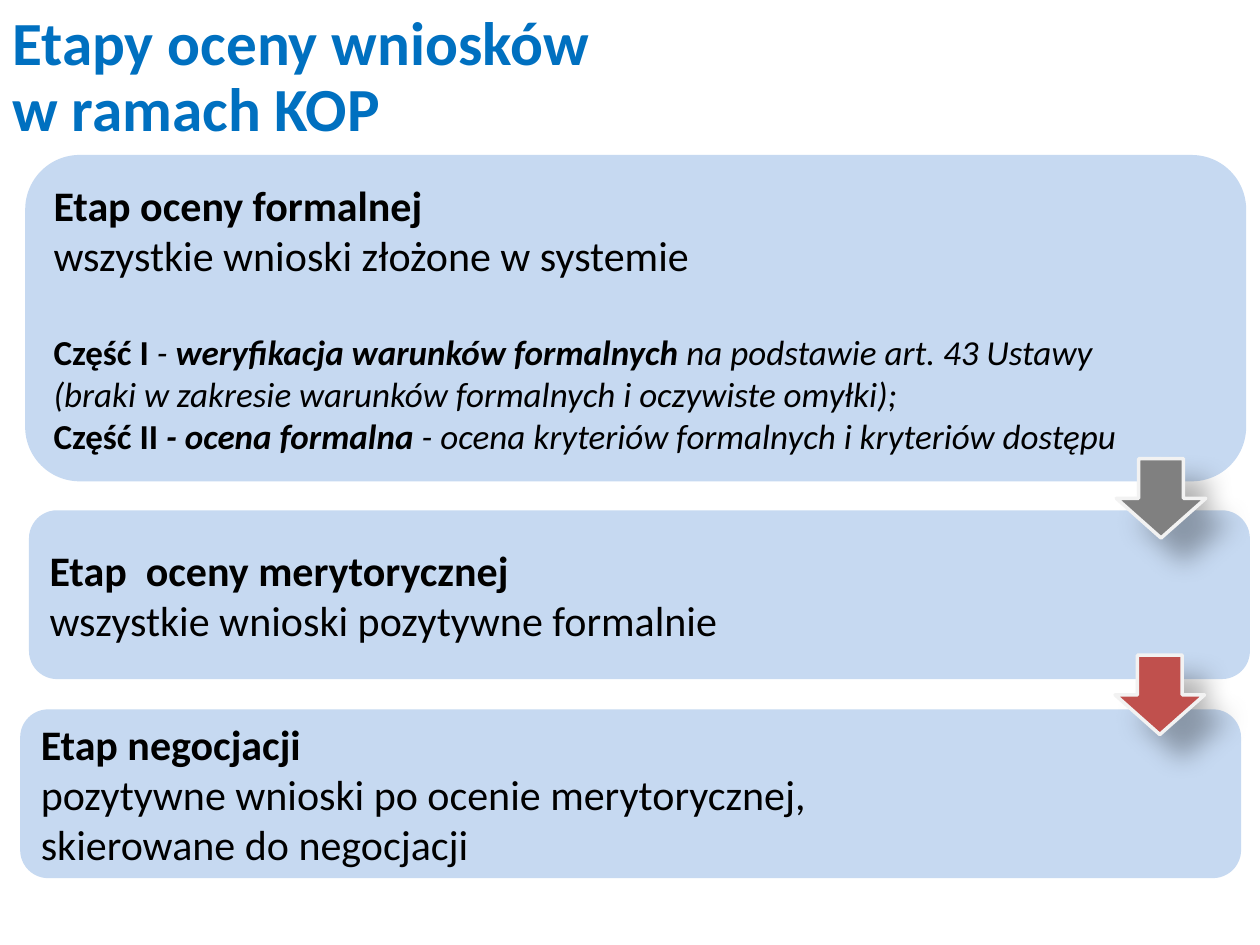
from dataclasses import dataclass

from lxml import etree
from pptx import Presentation
from pptx.dml.color import RGBColor
from pptx.enum.shapes import MSO_SHAPE
from pptx.enum.text import MSO_ANCHOR, PP_ALIGN
from pptx.oxml.ns import qn
from pptx.util import Inches, Pt

ROUNDED = MSO_SHAPE.ROUNDED_RECTANGLE
DOWN_ARROW = MSO_SHAPE.DOWN_ARROW
MIDDLE = MSO_ANCHOR.MIDDLE
LEFT = PP_ALIGN.LEFT

TITLE_BLUE = RGBColor(0x00, 0x70, 0xC0)
PANEL_BLUE = RGBColor(0xC6, 0xD9, 0xF1)
BLACK = RGBColor(0x00, 0x00, 0x00)
GRAY = RGBColor(0x80, 0x80, 0x80)
RED = RGBColor(0xC0, 0x50, 0x4D)
OFF_WHITE = RGBColor(0xF2, 0xF2, 0xF2)

FONT = "Calibri"
SLIDE_WIDTH, SLIDE_HEIGHT = Inches(10), Inches(7.5)
COLUMN = SLIDE_WIDTH / 100
ROW = SLIDE_HEIGHT / 75
PANEL_COLUMNS = 96.9
ARROW_COLUMNS, ARROW_ROWS = 7.1, 6.3


@dataclass
class Span:
    text: str
    bold: bool = False
    italic: bool = False


@dataclass
class Line:
    spans: list[Span]
    size: int = 24
    space_after: int = 0


@dataclass
class Stage:
    column: float
    row: float
    rows: float
    lines: list[Line]


@dataclass
class Arrow:
    column: float
    row: float
    color: RGBColor


STAGES = [
    Stage(2, 12.3, 25.9, [
        Line([Span("Etap oceny formalnej", bold=True)]),
        Line([Span("wszystkie wnioski złożone w systemie")], space_after=29),
        Line([Span("Część I ", bold=True), Span("- ", italic=True),
              Span("weryfikacja warunków formalnych ", bold=True, italic=True),
              Span("na podstawie art. 43 Ustawy", italic=True)], size=20),
        Line([Span("(braki w zakresie warunków formalnych i oczywiste omyłki);",
                   italic=True)], size=20),
        Line([Span("Część II ", bold=True),
              Span("- ocena formalna ", bold=True, italic=True),
              Span("- ocena kryteriów formalnych i kryteriów dostępu",
                   italic=True)], size=20),
    ]),
    Stage(2.3, 40.5, 13.4, [
        Line([Span("Etap  oceny merytorycznej", bold=True)]),
        Line([Span("wszystkie wnioski pozytywne formalnie")]),
    ]),
    Stage(1.6, 56.3, 13.4, [
        Line([Span("Etap negocjacji", bold=True)]),
        Line([Span("pozytywne wnioski po ocenie merytorycznej,\v"
                   "skierowane do negocjacji")]),
    ]),
]

ARROWS = [Arrow(88.6, 36.4, GRAY), Arrow(88.5, 52, RED)]


def grid_box(column: float, row: float, columns: float, rows: float) -> list[int]:
    return [round(column * COLUMN), round(row * ROW),
            round(columns * COLUMN), round(rows * ROW)]


def draw_title(page, text: str) -> None:
    box = page.shapes.add_textbox(*grid_box(0, 0, 90.2, 12.5))
    frame = box.text_frame
    frame.word_wrap = True
    frame.vertical_anchor = MIDDLE
    para = frame.paragraphs[0]
    para.text = text
    para.line_spacing = 0.9
    para.font.name = FONT
    para.font.size = Pt(35)
    para.font.bold = True
    para.font.color.rgb = TITLE_BLUE


def write_line(para, line: Line) -> None:
    para.alignment = LEFT
    para.space_after = Pt(line.space_after)
    para.font.name = FONT
    para.font.size = Pt(line.size)
    para.font.color.rgb = BLACK
    if len(line.spans) == 1:
        span = line.spans[0]
        para.text = span.text
        para.font.bold = span.bold
        para.font.italic = span.italic
        return
    for span in line.spans:
        run = para.add_run()
        run.text = span.text
        run.font.bold = span.bold
        run.font.italic = span.italic


def draw_stage(page, stage: Stage) -> None:
    panel = page.shapes.add_shape(
        ROUNDED, *grid_box(stage.column, stage.row, PANEL_COLUMNS, stage.rows))
    panel.shadow.inherit = False
    panel.fill.solid()
    panel.fill.fore_color.rgb = PANEL_BLUE
    panel.line.fill.background()
    frame = panel.text_frame
    frame.word_wrap = True
    frame.vertical_anchor = MIDDLE
    for index, line in enumerate(stage.lines):
        para = frame.add_paragraph() if index else frame.paragraphs[0]
        write_line(para, line)


def add_shadow(shape) -> None:
    shape.shadow.inherit = False
    effects = shape._element.spPr.find(qn("a:effectLst"))
    shadow = etree.SubElement(
        effects, qn("a:outerShdw"), blurRad=str(Pt(15)), dist=str(Pt(18)),
        dir=str(45 * 60000), algn="ctr", rotWithShape="0")
    color = etree.SubElement(shadow, qn("a:srgbClr"), val=str(BLACK))
    etree.SubElement(color, qn("a:alpha"), val="30000")


def draw_arrow(page, arrow: Arrow) -> None:
    shape = page.shapes.add_shape(
        DOWN_ARROW, *grid_box(arrow.column, arrow.row, ARROW_COLUMNS, ARROW_ROWS))
    shape.fill.solid()
    shape.fill.fore_color.rgb = arrow.color
    shape.line.color.rgb = OFF_WHITE
    shape.line.width = Pt(2)
    add_shadow(shape)


def main() -> None:
    deck = Presentation()
    deck.slide_width, deck.slide_height = SLIDE_WIDTH, SLIDE_HEIGHT
    page = deck.slides.add_slide(deck.slide_layouts[6])
    draw_title(page, "Etapy oceny wniosków\vw ramach KOP")
    for stage in STAGES:
        draw_stage(page, stage)
    for arrow in ARROWS:
        draw_arrow(page, arrow)
    deck.save("out.pptx")


if __name__ == "__main__":
    main()
